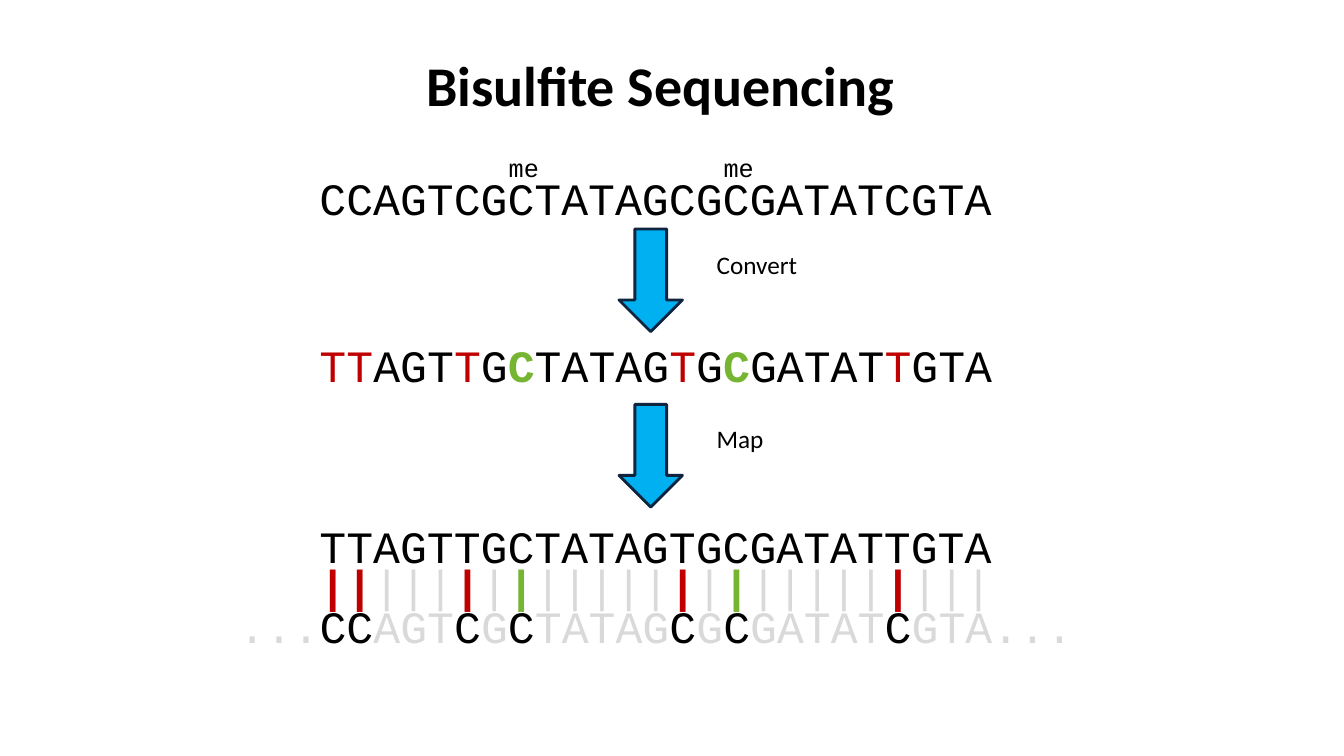
from dataclasses import dataclass
from itertools import groupby

from pptx import Presentation
from pptx.dml.color import RGBColor
from pptx.enum.shapes import MSO_SHAPE
from pptx.enum.text import MSO_ANCHOR, MSO_AUTO_SIZE, PP_ALIGN
from pptx.util import Cm, Pt


@dataclass(frozen=True)
class Theme:
    sans: str = "Calibri"
    mono: str = "Courier New"
    title: int = 40
    bases: int = 32
    label: int = 18
    black: RGBColor = RGBColor(0, 0, 0)
    gray: RGBColor = RGBColor(0xD9, 0xD9, 0xD9)
    red: RGBColor = RGBColor(0xC0, 0, 0)
    green: RGBColor = RGBColor(0x76, 0xB5, 0x31)
    arrow: RGBColor = RGBColor(0, 0xB0, 0xF0)
    outline: RGBColor = RGBColor(0x0F, 0x24, 0x3E)


THEME = Theme()

# The read, its methylated positions, and the read after conversion
READ = "CCAGTCGCTATAGCGCGATATCGTA"
METHYLATED = (7, 15)
CONVERTED = "".join(
    "T" if base == "C" and i not in METHYLATED else base
    for i, base in enumerate(READ)
)

# Column grid: one monospaced character per step (cm)
LEFT, STEP, PAD = 7.8, 0.677, 0.55


def base_style(i, plain):
    """Return colour and weight of the base at position i."""
    if i in METHYLATED:
        return THEME.green, True
    return (THEME.red if READ[i] == "C" else plain), False


def add_text(shapes, x, y, w, h, runs, font, size):
    """Add a one-line text box; runs are (text, colour, bold)."""
    s = shapes.add_textbox(Cm(x), Cm(y), Cm(w), Cm(h))
    tf = s.text_frame
    tf.word_wrap = False
    tf.auto_size = MSO_AUTO_SIZE.SHAPE_TO_FIT_TEXT
    p = tf.paragraphs[0]
    p.font.name, p.font.size = font, Pt(size)
    for text, color, bold in runs:
        r = p.add_run()
        r.text = text
        r.font.name, r.font.size = font, Pt(size)
        r.font.color.rgb, r.font.bold = color, bold
    return s


def add_sequence(shapes, y, text, styles, start=0):
    """Add a sequence row, joining neighbours of equal style into one run."""
    runs = []
    for style, group in groupby(zip(text, styles), key=lambda pair: pair[1]):
        runs.append(("".join(char for char, _ in group), *style))
    add_text(shapes, LEFT + start * STEP, y, len(text) * STEP + PAD + 0.17, 1.63,
             runs, THEME.mono, THEME.bases)


def add_step(slide, y, label, label_y, label_w):
    """Add a down arrow with its label."""
    shapes = slide.shapes.add_group_shape().shapes
    s = shapes.add_shape(MSO_SHAPE.DOWN_ARROW, Cm(15.6), Cm(y), Cm(1.6), Cm(2.59))
    s.shadow.inherit = False
    s.fill.solid()
    s.fill.fore_color.rgb = THEME.arrow
    s.line.color.rgb = THEME.outline
    s.line.width = Pt(2)
    add_text(shapes, 17.81, label_y, label_w, 1.02,
             [(label, THEME.black, False)], THEME.sans, THEME.label)


def add_title(slide, text):
    s = add_text(slide.shapes, 5.21, 0.53, 22.86, 3.18,
                 [(text, THEME.black, True)], THEME.sans, THEME.title)
    tf = s.text_frame
    tf.word_wrap = True
    tf.auto_size = MSO_AUTO_SIZE.NONE
    tf.vertical_anchor = MSO_ANCHOR.MIDDLE
    tf.paragraphs[0].alignment = PP_ALIGN.CENTER


def add_alignment(slide):
    """Add the converted read, the reference below it and the match bars."""
    shapes = slide.shapes.add_group_shape().shapes
    plain = (THEME.black, False)
    faded = (THEME.gray, False)
    add_sequence(shapes, 12.95, CONVERTED, [plain] * len(READ))
    reference = [plain if base == "C" else faded for base in READ]
    add_sequence(shapes, 14.96, f"...{READ}...",
                 [faded] * 3 + reference + [faded] * 3, start=-3)
    bars = [(base_style(i, THEME.gray)[0], base == "C")
            for i, base in enumerate(READ)]
    add_sequence(shapes, 13.94, "|" * len(READ), bars)


def main():
    prs = Presentation()
    prs.slide_width, prs.slide_height = Cm(33.87), Cm(19.05)
    slide = prs.slides.add_slide(prs.slide_layouts[6])
    add_title(slide, "Bisulfite Sequencing")

    # Methylated read
    add_sequence(slide.shapes, 4.17, READ, [(THEME.black, False)] * len(READ))
    for i in METHYLATED:
        add_text(slide.shapes, LEFT + i * STEP + 0.03, 3.71, 1.27, 1.02,
                 [("me", THEME.black, False)], THEME.mono, THEME.label)

    # Converted read
    add_step(slide, 5.77, "Convert", 6.17, 2.57)
    add_sequence(slide.shapes, 8.38, CONVERTED,
                 [base_style(i, THEME.black) for i in range(len(READ))])

    # Mapped read
    add_step(slide, 10.19, "Map", 10.54, 1.7)
    add_alignment(slide)
    prs.save("out.pptx")


if __name__ == "__main__":
    main()
